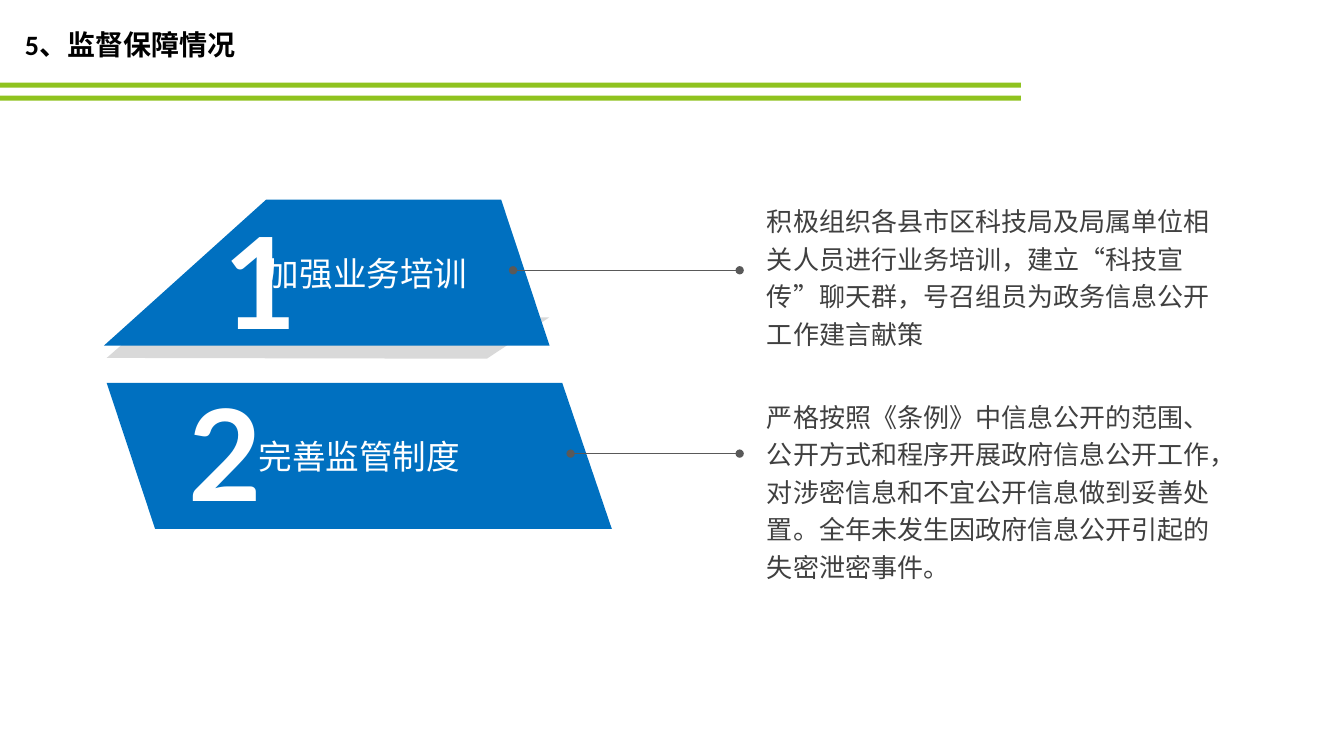
from lxml.etree import SubElement
from pptx import Presentation
from pptx.dml.color import RGBColor
from pptx.enum.shapes import MSO_CONNECTOR, MSO_SHAPE
from pptx.enum.text import MSO_ANCHOR, PP_ALIGN
from pptx.oxml.ns import qn
from pptx.util import Cm, Pt

GREEN = RGBColor(0x8F, 0xC3, 0x1F)
BLUE = RGBColor(0x00, 0x70, 0xC0)
SHADE = RGBColor(0xD9, 0xD9, 0xD9)
WHITE = RGBColor(0xFF, 0xFF, 0xFF)
BLACK = RGBColor(0x00, 0x00, 0x00)
TEXT = RGBColor(0x40, 0x40, 0x40)
LINE = RGBColor(0x59, 0x59, 0x59)
CJK = "Noto Sans CJK SC"

TITLE = {"name": "Calibri", "size": Pt(20), "bold": True}
LABEL = {"name": CJK, "size": Pt(24)}
NUMBER = {"name": "Lato", "size": Pt(90.7), "bold": True}
DETAIL = {"name": CJK, "size": Pt(18.6)}
CENTERED = {"alignment": PP_ALIGN.CENTER}
PADDED = {"margin_left": Cm(0.33), "margin_right": Cm(0.33),
          "margin_top": Cm(0.15), "margin_bottom": Cm(0.15),
          "vertical_anchor": MSO_ANCHOR.MIDDLE}

# Lengths are in cm; outlines and offsets are relative to each panel's corner
PANELS = [
    {"number": "1", "label": "加强业务培训", "corner": (2.62, 5.03),
     "outline": [(4.09, 0), (10.01, 0), (11.23, 3.68), (0, 3.68)],
     "frame": {"margin_left": Cm(2.77), "margin_right": Cm(0.76)},
     "number_at": (2.69, -1.27), "line_from": 10.31,
     "detail_box": (-0.13, 4.09),
     "detail": "积极组织各县市区科技局及局属单位相关人员进行业务培训，"
               "建立“科技宣传”聊天群，号召组员为政务信息公开工作建言献策"},
    {"number": "2", "label": "完善监管制度", "corner": (2.69, 9.65),
     "outline": [(0, 0), (11.48, 0), (12.73, 3.68), (1.22, 3.68)],
     "frame": {},
     "number_at": (1.73, -1.55), "line_from": 11.69,
     "detail_box": (0.18, 5.05),
     "detail": "严格按照《条例》中信息公开的范围、公开方式和程序开展政府信息公开工作，"
               "对涉密信息和不宜公开信息做到妥善处置。"
               "全年未发生因政府信息公开引起的失密泄密事件。"},
]


def set_all(target, values):
    for name, value in values.items():
        setattr(target, name, value)


def paint(shape, color):
    shape.shadow.inherit = False
    shape.fill.solid()
    shape.fill.fore_color.rgb = color
    shape.line.fill.background()


def write(shape, text, font, color, frame=None, para_format=None):
    shape.text_frame.word_wrap = True
    set_all(shape.text_frame, frame or {})
    para = shape.text_frame.paragraphs[0]
    set_all(para, para_format or {})
    span = para.add_run()
    span.text = text
    set_all(span.font, font)
    span.font.color.rgb = color
    # Typeface for the Chinese characters
    SubElement(span.font._element, qn("a:ea"), typeface=CJK)


def add_text(page, box, *content):
    write(page.shapes.add_textbox(*map(Cm, box)), *content)


def add_outline(page, left, top, points, color):
    corners = [(Cm(left + x), Cm(top + y)) for x, y in points]
    builder = page.shapes.build_freeform(*corners[0])
    builder.add_line_segments(corners[1:], close=True)
    shape = builder.convert_to_shape()
    paint(shape, color)
    return shape


def add_dotted_line(page, start, end, y):
    line = page.shapes.add_connector(
        MSO_CONNECTOR.STRAIGHT, Cm(start), Cm(y), Cm(end), Cm(y))
    line.line.color.rgb = LINE
    line.line.width = Pt(1)
    for tag in ("a:headEnd", "a:tailEnd"):
        SubElement(line.line._get_or_add_ln(), qn(tag), type="oval")
    SubElement(line._element.spPr, qn("a:effectLst"))


def add_header(page, left, top, width):
    # Two green rules under the title
    for offset in (2.08, 2.41):
        bar = page.shapes.add_shape(MSO_SHAPE.RECTANGLE, Cm(left),
                                    Cm(top + offset), Cm(width), Cm(0.13))
        paint(bar, GREEN)
    add_text(page, (left + 0.38, top + 0.58, 6.27, 1.12),
             "5、监督保障情况", TITLE, BLACK)


def add_panel(page, panel):
    left, top = panel["corner"]
    # Slanted panel with its label
    shape = add_outline(page, left, top, panel["outline"], BLUE)
    write(shape, panel["label"], LABEL, WHITE,
          PADDED | panel["frame"], CENTERED)
    # Large number
    dx, dy = panel["number_at"]
    add_text(page, (left + dx, top + dy, 2.18, 5.36), panel["number"],
             NUMBER, WHITE, PADDED, CENTERED | {"line_spacing": 1.3})
    # Explanation and the line leading to it
    dy, height = panel["detail_box"]
    add_text(page, (19.08, top + dy, 11.99, height), panel["detail"],
             DETAIL, TEXT, None, {"line_spacing": 1.2})
    add_dotted_line(page, left + panel["line_from"], 18.64, top + 1.78)


def main():
    deck = Presentation()
    deck.slide_width, deck.slide_height = Cm(33.87), Cm(19.05)
    page = deck.slides.add_slide(deck.slide_layouts[6])
    add_header(page, 0, 0, 25.73)
    # Grey shade behind the first panel
    add_outline(page, 2.69, 8,
                [(1.17, 0), (11.15, 0), (9.58, 1.04), (0, 1.02)], SHADE)
    for panel in PANELS:
        add_panel(page, panel)
    deck.save("out.pptx")


if __name__ == "__main__":
    main()
